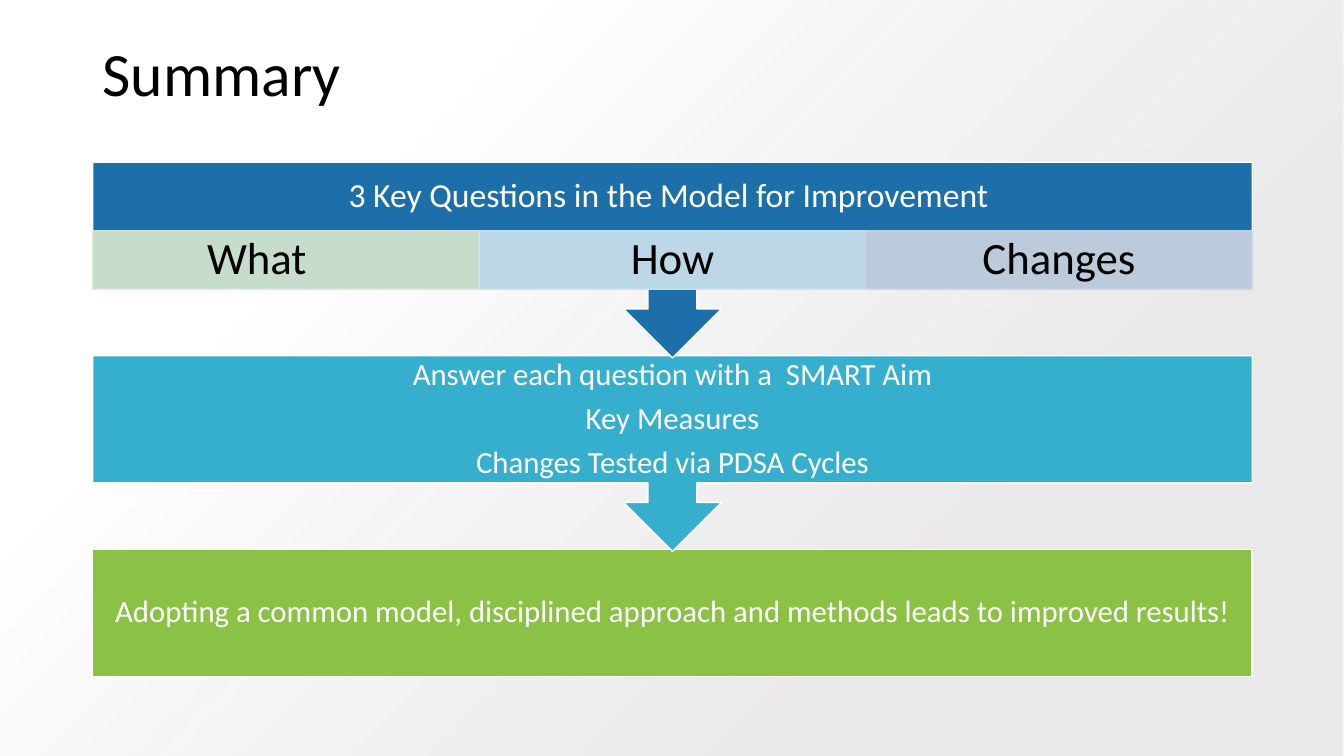
from lxml import etree
from pptx import Presentation
from pptx.dml.color import RGBColor
from pptx.enum.shapes import MSO_SHAPE as SHAPE
from pptx.enum.text import MSO_ANCHOR as ANCHOR, PP_ALIGN as ALIGN
from pptx.oxml.ns import qn
from pptx.util import Inches, Pt


def rgb(hex_color):
    return RGBColor.from_string(hex_color)


def add_block(kind, box, color, lines, size, ink, insets, opacity=100):
    """Add a filled, outlined shape with centred text; insets are left, top, right, bottom."""
    sp = s.shapes.add_shape(kind, *map(Inches, box))
    sp.shadow.inherit = False
    sp.fill.solid()
    sp.fill.fore_color.rgb = rgb(color)
    sp.line.color.rgb = rgb("FFFFFF" if opacity == 100 else color)
    sp.line.width = Pt(1)
    if opacity < 100:
        for clr in sp._element.spPr.iter(qn("a:srgbClr")):
            etree.SubElement(clr, qn("a:alpha"), val=str(opacity * 1000))
    tf = sp.text_frame
    tf.word_wrap = True
    tf.vertical_anchor = ANCHOR.MIDDLE
    for side, inset in zip(("left", "top", "right", "bottom"), insets):
        setattr(tf, f"margin_{side}", Inches(inset))
    tf.text = "\n".join(lines)
    for p in tf.paragraphs:
        p.alignment, p.line_spacing = ALIGN.CENTER, 0.9
        p.space_after = Pt(0.35 * size)
        for name, value in {"name": "Calibri", "size": Pt(size)}.items():
            setattr(p.runs[0].font, name, value)
        p.runs[0].font.color.rgb = rgb(ink)


prs = Presentation()
prs.slide_width, prs.slide_height = Inches(13.33), Inches(7.5)
s = prs.slides.add_slide(prs.slide_layouts[6])

# Background glow from the bottom right corner
glow = s.shapes.add_shape(SHAPE.RECTANGLE, 0, 0, prs.slide_width, prs.slide_height)
glow.shadow.inherit = False
glow.line.fill.background()
glow.fill.gradient()
for stop, position, color in zip(glow.fill.gradient_stops, (0.28, 0.74), ("E7E6E6", "FFFFFF")):
    stop.position = position
    stop.color.rgb = rgb(color)
grad = glow._element.spPr.find(qn("a:gradFill"))
etree.SubElement(next(grad.iter(qn("a:srgbClr"))), qn("a:alpha"), val="84000")
grad.remove(grad.find(qn("a:lin")))
circle = etree.SubElement(grad, qn("a:path"), path="circle")
etree.SubElement(circle, qn("a:fillToRect"), l="100000", t="100000")

# Grid: three rows, the first one split into three columns
LEFT, WIDTH, TOP, PITCH = 0.92, 11.5, 1.61, 1.92
BODY, CALLOUT = 1.26, 1.94
HEADER, CELL = 0.68, 0.58

title = s.shapes.add_textbox(*map(Inches, (LEFT, 0.03, WIDTH, 1.45)))
tf = title.text_frame
tf.word_wrap = True
tf.vertical_anchor = ANCHOR.MIDDLE
p = tf.paragraphs[0]
p.line_spacing = 0.9
r = p.add_run()
r.text = "Summary"
for name, value in {"name": "Calibri", "size": Pt(44)}.items():
    setattr(r.font, name, value)
r.font.color.rgb = rgb("000000")

steps = [
    (SHAPE.DOWN_ARROW_CALLOUT, CALLOUT, "1D6FA9", 24, (0.19, 0, 0.27, CELL),
     ["3 Key Questions in the Model for Improvement"]),
    (SHAPE.DOWN_ARROW_CALLOUT, CALLOUT, "36AFCE", 22, (0.17, 0, 0.17, 0),
     ["Answer each question with a  SMART Aim", "Key Measures", "Changes Tested via PDSA Cycles"]),
    (SHAPE.RECTANGLE, BODY, "8BC145", 22, (0.17, 0, 0.17, 0),
     ["Adopting a common model, disciplined approach and methods leads to improved results!"]),
]
# Last step first, so that each arrow tip lies over the step below it
for row, (kind, height, color, size, insets, lines) in reversed(list(enumerate(steps))):
    add_block(kind, (LEFT, TOP + row * PITCH, WIDTH, height), color, lines, size, "FFFFFF", insets)

questions = [("What", "DAE9CF", 0.83), ("How", "CEE3ED", 0.25), ("Changes", "CDD5E2", 0.25)]
col_width = WIDTH / len(questions)
for col, (word, color, right) in enumerate(questions):
    add_block(SHAPE.RECTANGLE, (LEFT + col * col_width, TOP + HEADER, col_width, CELL),
              color, [word], 32, "000000", (0.25, 0.04, right, 0.04), opacity=90)

prs.save("out.pptx")
